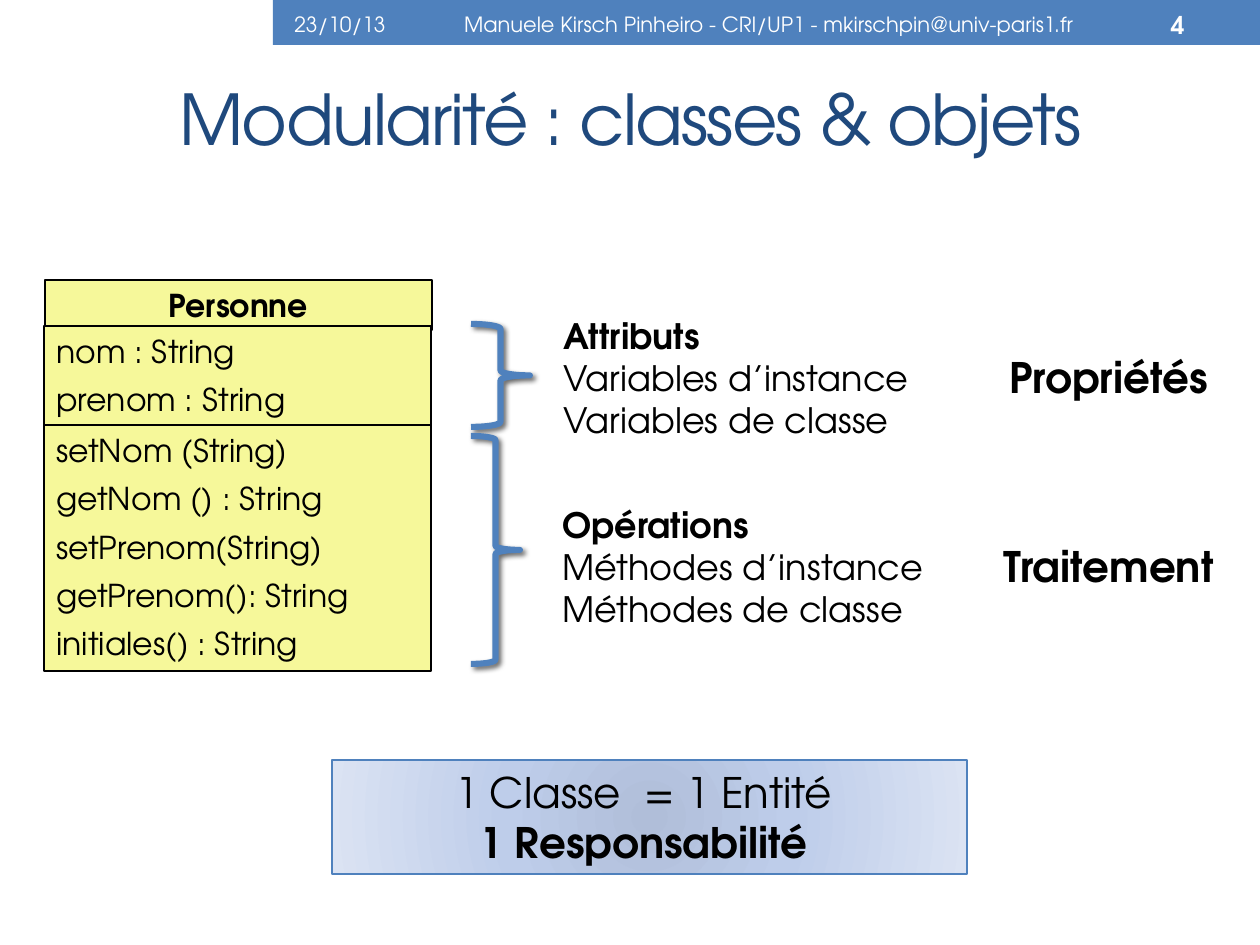
from pptx import Presentation
from pptx.dml.color import RGBColor
from pptx.enum.shapes import MSO_SHAPE as Shape
from pptx.enum.text import MSO_ANCHOR as Anchor, MSO_AUTO_SIZE as AutoSize, PP_ALIGN as Align
from pptx.oxml import parse_xml
from pptx.oxml.ns import nsdecls
from pptx.util import Pt

PX = 914400 / 126
FONT = "TeX Gyre Adventor"
WHITE = RGBColor(0xFF, 0xFF, 0xFF)
BLACK = RGBColor(0x00, 0x00, 0x00)
BLUE = RGBColor(0x4F, 0x81, 0xBD)
NAVY = RGBColor(0x1F, 0x49, 0x7D)
YELLOW = RGBColor(0xF6, 0xF8, 0x9A)
GRADIENT = [(0, RGBColor(0xB0, 0xBE, 0xD9)),
            (45, RGBColor(0xBE, 0xCD, 0xEA)),
            (100, RGBColor(0xDB, 0xE3, 0xF3))]


def emu(*lengths):
    return [round(length * PX) for length in lengths]


def write(box, lines, size=18, color=BLACK, bold_lines=(), align=Align.LEFT,
          anchor=Anchor.TOP, gap=0, wrap=True, grow=True, tracking=None):
    """Fill a shape with one paragraph per line; bold_lines holds line indexes."""
    frame = box.text_frame
    frame.word_wrap = wrap
    frame.auto_size = AutoSize.SHAPE_TO_FIT_TEXT if grow else AutoSize.NONE
    frame.vertical_anchor = anchor
    for index, line in enumerate(lines):
        para = frame.add_paragraph() if index else frame.paragraphs[0]
        para.alignment = align
        if index and gap:
            para.space_before = Pt(gap)
        span = para.add_run()
        span.text = line
        span.font.name = FONT
        span.font.size = Pt(size)
        span.font.bold = index in bold_lines
        span.font.color.rgb = color
        if tracking is not None:
            span.font._element.set("spc", str(tracking * 100))


def add_text(page, area, lines, **style):
    box = page.shapes.add_textbox(*emu(*area))
    write(box, lines, **style)


def add_box(shapes, area, fill=None, line=None, width=1):
    box = shapes.add_shape(Shape.RECTANGLE, *emu(*area))
    box.shadow.inherit = False
    if fill is not None:
        box.fill.solid()
        box.fill.fore_color.rgb = fill
    if line is None:
        box.line.fill.background()
    else:
        box.line.color.rgb = line
        box.line.width = Pt(width)
    return box


def add_brace(page, area):
    brace = page.shapes.add_shape(Shape.RIGHT_BRACE, *emu(*area))
    brace.fill.background()
    brace.line.color.rgb = BLUE
    brace.line.width = Pt(3.5)
    brace._element.spPr.append(parse_xml(
        f'<a:effectLst {nsdecls("a")}>'
        f'<a:outerShdw blurRad="{Pt(3)}" dist="{Pt(2)}" dir="2700000" rotWithShape="0">'
        '<a:srgbClr val="000000"><a:alpha val="60000"/></a:srgbClr>'
        '</a:outerShdw></a:effectLst>'))


def fill_radial(box, stops):
    marks = "".join(f'<a:gs pos="{place * 1000}"><a:srgbClr val="{color}"/></a:gs>'
                    for place, color in stops)
    box._element.spPr.prstGeom.addnext(parse_xml(
        f'<a:gradFill {nsdecls("a")}><a:gsLst>{marks}</a:gsLst>'
        '<a:path path="circle">'
        '<a:fillToRect l="50000" t="50000" r="50000" b="50000"/></a:path></a:gradFill>'))


def add_header(page):
    add_box(page.shapes, (273, 0, 987, 45), fill=BLUE)
    fields = [
        (282, 149, "23/10/13", 12, Align.LEFT, ()),
        (422, 694, "Manuele Kirsch Pinheiro - CRI/UP1 - mkirschpin@univ-paris1.fr",
         12, Align.CENTER, ()),
        (1126, 71, "4", 14, Align.RIGHT, (0,)),
    ]
    for left, width, text, size, align, bold in fields:
        add_text(page, (left, 3, width, 43), [text], size=size, color=WHITE, align=align,
                 bold_lines=bold, anchor=Anchor.MIDDLE, grow=False)


def add_class_diagram(page):
    group = page.shapes.add_group_shape()
    sections = [
        ((45, 280, 387, 50), ["Personne"], Align.CENTER, (0,)),
        ((44, 326, 387, 99), ["nom : String", "prenom : String"], Align.LEFT, ()),
        ((44, 425, 387, 246), ["setNom (String)", "getNom () : String", "setPrenom(String)",
                               "getPrenom(): String", "initiales() : String"],
         Align.LEFT, ()),
    ]
    for area, lines, align, bold in sections:
        box = add_box(group.shapes, area, fill=YELLOW, line=BLACK)
        write(box, lines, align=align, bold_lines=bold, gap=6)


def main():
    deck = Presentation()
    deck.slide_width, deck.slide_height = emu(1260, 945)
    page = deck.slides.add_slide(deck.slide_layouts[6])

    # Header and title
    add_header(page)
    add_text(page, (64, 55, 1133, 126), ["Modularité : classes & objets"], size=40, color=NAVY,
             align=Align.CENTER, anchor=Anchor.MIDDLE, grow=False, tracking=-1)

    # Class diagram with its braces
    add_class_diagram(page)
    add_brace(page, (471, 324, 59, 103))
    add_brace(page, (471, 436, 49, 228))

    # Explanations and their roles
    add_text(page, (551, 308, 373, 140),
             ["Attributs", "Variables d’instance", "Variables de classe"],
             size=20, bold_lines=(0,), wrap=False)
    add_text(page, (550, 497, 391, 140),
             ["Opérations", "Méthodes d’instance", "Méthodes de classe"],
             size=20, bold_lines=(0,), wrap=False)
    for area, role in [((995, 345, 227, 63), "Propriétés "),
                       ((989, 534, 239, 63), "Traitement ")]:
        add_text(page, area, [role], size=24, bold_lines=(0,), align=Align.CENTER, wrap=False)

    # Conclusion
    conclusion = add_box(page.shapes, (332, 760, 635, 114), line=BLUE, width=0.75)
    fill_radial(conclusion, GRADIENT)
    write(conclusion, ["1 Classe  = 1 Entité ", "1 Responsabilité "], size=24,
          bold_lines=(1,), align=Align.CENTER)

    deck.save("out.pptx")


if __name__ == "__main__":
    main()
